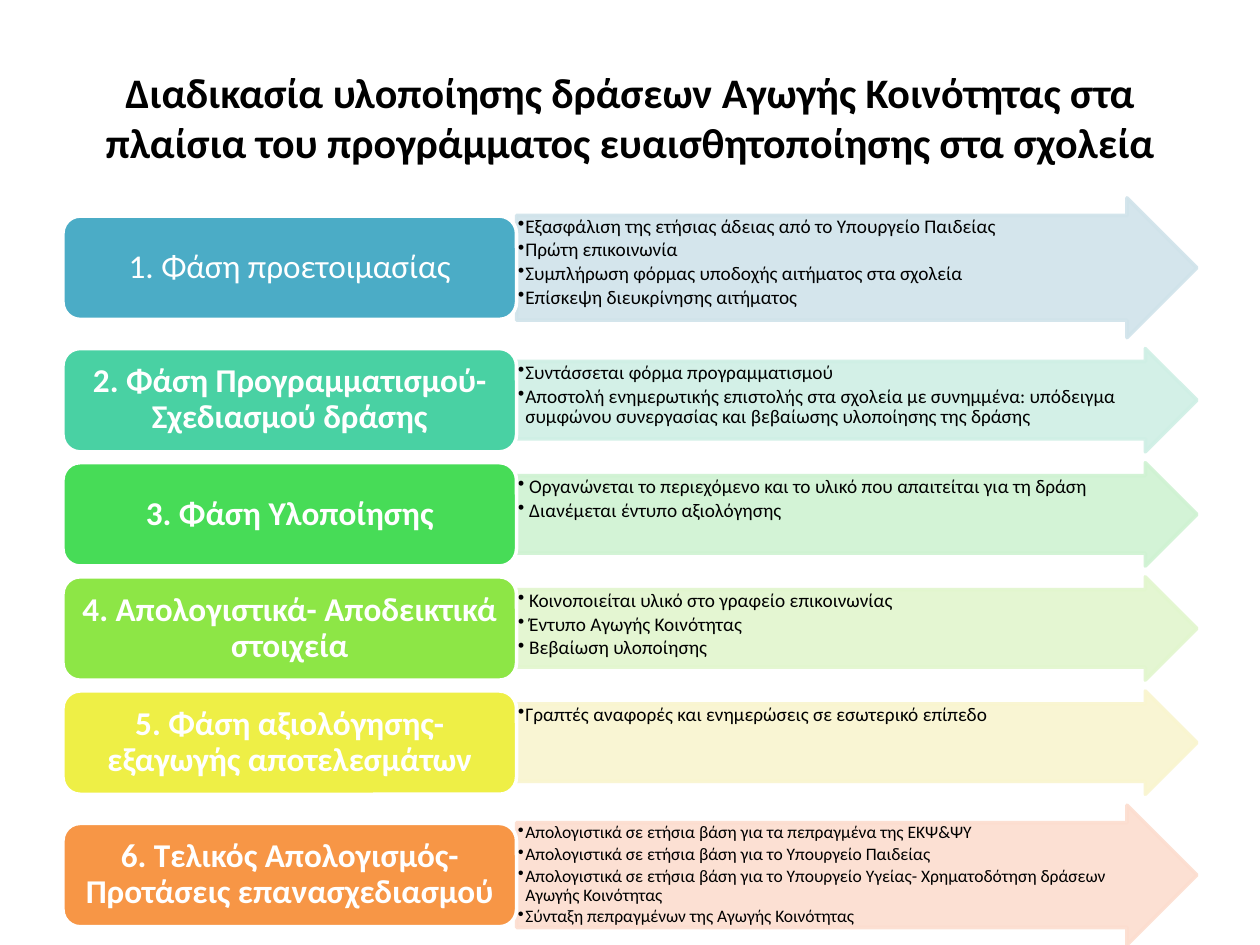
from lxml import etree
from pptx import Presentation
from pptx import util as u
from pptx.dml.color import RGBColor
from pptx.enum import shapes, text
from pptx.oxml.ns import qn

Inches, Pt = u.Inches, u.Pt
FONT = "Calibri"
COLORS = {
    "text": "000000", "white": "FFFFFF",
    "prepare": "4BACC6", "prepare_pale": "D0E3EA",
    "plan": "49D1A3", "plan_pale": "CFEFE5",
    "deliver": "47DC57", "deliver_pale": "CFF2D2",
    "report": "8DE646", "report_pale": "E2F6CE",
    "evaluate": "EEEF46", "evaluate_pale": "F9F5CF",
    "review": "F79646", "review_pale": "FCDDCF",
}

# colour key, label, bold label, arrow height, bullet size, bullet indent, steps
PHASES = [
    ("prepare", "1. Φάση προετοιμασίας", False, 1.11, 11, 0.06, [
        "Εξασφάλιση της ετήσιας άδειας από το Υπουργείο Παιδείας",
        "Πρώτη επικοινωνία",
        "Συμπλήρωση φόρμας υποδοχής αιτήματος στα σχολεία",
        "Επίσκεψη διευκρίνησης αιτήματος"]),
    ("plan", "2. Φάση Προγραμματισμού- Σχεδιασμού δράσης", True, 0.82, 11, 0.06, [
        "Συντάσσεται φόρμα προγραμματισμού",
        "Αποστολή ενημερωτικής επιστολής στα σχολεία με συνημμένα: υπόδειγμα "
        "συμφώνου συνεργασίας και βεβαίωσης υλοποίησης της δράσης"]),
    ("deliver", "3. Φάση Υλοποίησης", True, 0.82, 11, 0.09, [
        "Οργανώνεται το περιεχόμενο και το υλικό που απαιτείται για τη δράση",
        "Διανέμεται έντυπο αξιολόγησης"]),
    ("report", "4. Απολογιστικά- Αποδεικτικά στοιχεία", True, 0.82, 11, 0.09, [
        "Κοινοποιείται υλικό στο γραφείο επικοινωνίας",
        "Έντυπο Αγωγής Κοινότητας",
        "Βεβαίωση υλοποίησης"]),
    ("evaluate", "5. Φάση αξιολόγησης- εξαγωγής αποτελεσμάτων", True, 0.82, 11, 0.06, [
        "Γραπτές αναφορές και ενημερώσεις σε εσωτερικό επίπεδο"]),
    ("review", "6. Τελικός Απολογισμός- Προτάσεις επανασχεδιασμού", True, 1.11, 10, 0.06, [
        "Απολογιστικά σε ετήσια βάση για τα πεπραγμένα της ΕΚΨ&ΨΥ",
        "Απολογιστικά σε ετήσια βάση για το Υπουργείο Παιδείας",
        "Απολογιστικά σε ετήσια βάση για το Υπουργείο Υγείας- Χρηματοδότηση "
        "δράσεων Αγωγής Κοινότητας",
        "Σύνταξη πεπραγμένων της Αγωγής Κοινότητας"]),
]
LEFT, MIDDLE, RIGHT = 0.5, 4.1, 9.5
TOP, BOTTOM = 1.57, 7.5
LABEL_HEIGHT = 0.82
GAP = (BOTTOM - TOP - sum(phase[3] for phase in PHASES)) / (len(PHASES) - 1)


def add_panel(kind, box, fill, line, insets, anchor):
    """Add a filled, outlined shape and return it ready for text."""
    panel = slide.shapes.add_shape(kind, *map(Inches, box))
    panel.shadow.inherit = False
    panel.fill.solid()
    panel.fill.fore_color.rgb = RGBColor.from_string(COLORS[fill])
    panel.line.color.rgb = RGBColor.from_string(COLORS[line])
    panel.line.width = Pt(2)
    frame = panel.text_frame
    frame.word_wrap = True
    frame.vertical_anchor = anchor
    for side, inset in zip(("left", "top", "right", "bottom"), insets):
        setattr(frame, f"margin_{side}", Inches(inset))
    return panel


def write(paragraph, words, size, color, bold, align, spacing=0.9, after=0):
    paragraph.text = words
    layout = {"alignment": align, "line_spacing": spacing, "space_after": Pt(after)}
    for name, value in layout.items():
        setattr(paragraph, name, value)
    font = paragraph.runs[0].font
    for name, value in {"name": FONT, "size": Pt(size), "bold": bold}.items():
        setattr(font, name, value)
    font.color.rgb = RGBColor.from_string(COLORS[color])


prs = Presentation()
prs.slide_width, prs.slide_height = Inches(10), Inches(7.5)
slide = prs.slides.add_slide(prs.slide_layouts[5])

title = slide.shapes.title
title_box = {"left": 0.5, "top": 0.3, "width": 9, "height": 1.25}
for name, value in title_box.items():
    setattr(title, name, Inches(value))
title.text_frame.vertical_anchor = text.MSO_ANCHOR.MIDDLE
write(title.text_frame.paragraphs[0],
      "Διαδικασία υλοποίησης δράσεων Αγωγής Κοινότητας στα "
      "πλαίσια του προγράμματος ευαισθητοποίησης στα σχολεία",
      24, "text", True, text.PP_ALIGN.CENTER, spacing=1.0)

top = TOP
for key, label, bold, height, size, indent, steps in PHASES:
    pale = f"{key}_pale"
    # The right inset keeps the steps clear of the arrow's point
    arrow = add_panel(shapes.MSO_SHAPE.RIGHT_ARROW, (MIDDLE, top, RIGHT - MIDDLE, height),
                      pale, pale, (0.01, 0.01, height / 4 + 0.01, 0.01),
                      text.MSO_ANCHOR.TOP)
    arrow.adjustments[0], arrow.adjustments[1] = 0.75, 0.5
    for color in arrow._element.spPr.iter(qn("a:srgbClr")):
        etree.SubElement(color, qn("a:alpha"), val="90000")

    frame = arrow.text_frame
    for number, step in enumerate(steps):
        paragraph = frame.add_paragraph() if number else frame.paragraphs[0]
        properties = paragraph._p.get_or_add_pPr()
        properties.set("marL", str(Inches(indent)))
        properties.set("indent", str(-Inches(indent)))
        etree.SubElement(properties, qn("a:buChar"), char="•")
        write(paragraph, step, size, "text", False, text.PP_ALIGN.LEFT, after=0.15 * size)

    label_top = top + (height - LABEL_HEIGHT) / 2
    tab = add_panel(shapes.MSO_SHAPE.ROUNDED_RECTANGLE,
                    (LEFT, label_top, MIDDLE - LEFT, LABEL_HEIGHT),
                    key, "white", (0.08, 0.04, 0.08, 0.04), text.MSO_ANCHOR.MIDDLE)
    write(tab.text_frame.paragraphs[0], label, 19, "white", bold, text.PP_ALIGN.CENTER)
    top += height + GAP

prs.save("out.pptx")
